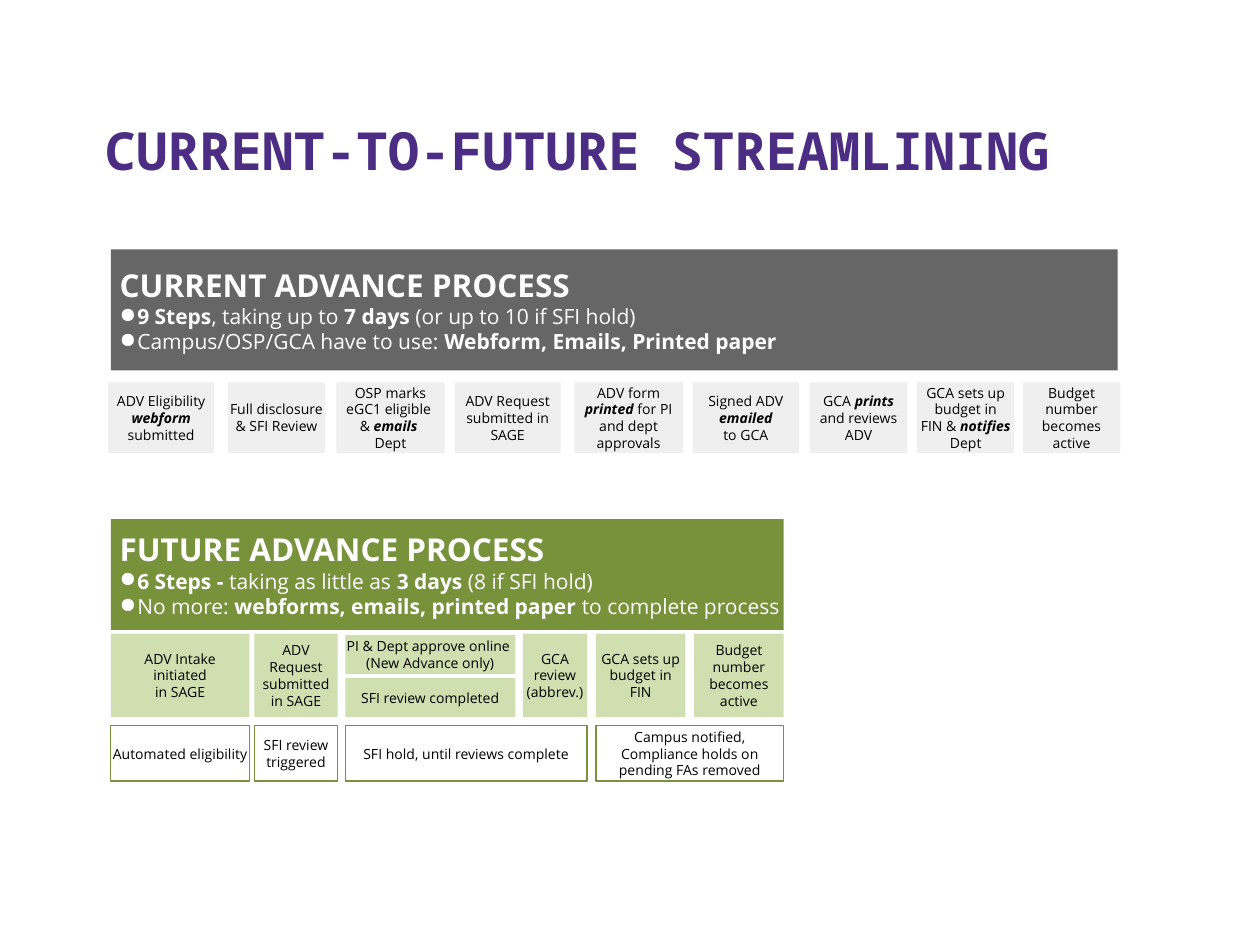
"""Build a slide comparing the current and future advance processes."""
import pptx
import pptx.util
import pptx.dml.color
import pptx.enum.shapes
import pptx.enum.text
import pptx.oxml.ns
from lxml import etree

RGBColor = pptx.dml.color.RGBColor
Inches = pptx.util.Inches
PURPLE = RGBColor(0x4B, 0x2E, 0x83)
GRAY = RGBColor(0x66, 0x66, 0x66)
PALE_GRAY = RGBColor(0xEF, 0xEF, 0xEF)
GREEN = RGBColor(0x77, 0x92, 0x3B)
PALE_GREEN = RGBColor(0xD0, 0xDF, 0xB0)
WHITE = RGBColor(0xFF, 0xFF, 0xFF)
BLACK = RGBColor(0, 0, 0)
TITLE_FONT, BODY_FONT = "Noto Sans Mono", "Open Sans"

TITLE = "CURRENT-TO-FUTURE STREAMLINING"
BANNERS = [
    ((0.88, 1.98, 7.99, 0.96), GRAY, "CURRENT ADVANCE PROCESS", [
        "*9 Steps*, taking up to *7 days *(or up to 10 if SFI hold)",
        "Campus/OSP/GCA have to use:* Webform, Emails, Printed paper*"]),
    ((0.88, 4.12, 5.34, 0.88), GREEN, "FUTURE ADVANCE PROCESS", [
        "*6 Steps - *taking as little as *3 days *(8 if SFI hold)",
        "No more: *webforms, emails, printed paper* to complete process"]),
]
CURRENT_STEPS = [
    (0.86, 0.84, "ADV Eligibility *webform *submitted"),
    (1.81, 0.77, "Full disclosure & SFI Review"),
    (2.67, 0.86, "OSP marks eGC1 eligible \v& *emails \v*Dept"),
    (3.61, 0.84, "ADV Request submitted in SAGE"),
    (4.56, 0.86, "ADV form *printed *for PI and dept approvals"),
    (5.50, 0.84, "Signed ADV *emailed*\nto GCA"),
    (6.43, 0.77, "GCA *prints* and reviews ADV"),
    (7.28, 0.77, "GCA sets up budget in\nFIN & *notifies *Dept"),
    (8.12, 0.77, "Budget number becomes active"),
]
CURRENT_ROW = (3.035, 0.56)
FUTURE_COLUMNS = [(0.88, 1.10), (2.02, 0.66), (2.74, 1.35),
                  (4.15, 0.51), (4.73, 0.71), (5.51, 0.71)]
FUTURE_ROWS = {"full": (5.03, 0.66), "upper": (5.04, 0.31),
               "lower": (5.38, 0.31), "notes": (5.76, 0.44)}
FUTURE_STEPS = [
    (0, 0, "full", "ADV Intake\ninitiated\nin SAGE"),
    (1, 1, "full", "ADV\nRequest submitted\nin SAGE"),
    (2, 2, "upper", "PI & Dept approve online \v(New Advance only)"),
    (2, 2, "lower", "SFI review completed"),
    (3, 3, "full", "GCA\nreview (abbrev.)"),
    (4, 4, "full", "GCA sets up budget in\nFIN"),
    (5, 5, "full", "Budget number becomes active"),
    (0, 0, "notes", "Automated eligibility"),
    (1, 1, "notes", "SFI review triggered"),
    (2, 3, "notes", "SFI hold, until reviews complete"),
    (4, 5, "notes", "Campus notified, Compliance holds on pending FAs removed"),
]


def apply(target, values):
    for name, value in values.items():
        setattr(target, name, value)


def set_font(font, size, color, name=BODY_FONT, **extra):
    apply(font, dict(size=pptx.util.Pt(size), name=name, **extra))
    font.color.rgb = color


def add_marked(para, text, size, color, italic=False):
    for index, part in enumerate(text.split("*")):
        strong = index % 2 == 1
        for number, piece in enumerate(part.split("\v")):
            if number:
                para.add_line_break()
            if piece:
                span = para.add_run()
                span.text = piece
                set_font(span.font, size, color, bold=strong, italic=strong and italic)


def indent(para, margin, first=0, bullet=None):
    props = para._p.get_or_add_pPr()
    props.set("marL", str(Inches(margin)))
    props.set("indent", str(Inches(first)))
    if bullet:
        qn = pptx.oxml.ns.qn
        color = etree.SubElement(props, qn("a:buClr"))
        etree.SubElement(color, qn("a:srgbClr"), val=str(WHITE))
        etree.SubElement(props, qn("a:buChar"), char=bullet)


def add_box(page, place, fill, outline=None):
    box = page.shapes.add_shape(pptx.enum.shapes.MSO_SHAPE.RECTANGLE, *map(Inches, place))
    box.shadow.inherit = False
    box.fill.solid()
    box.fill.fore_color.rgb = fill
    if outline:
        box.line.color.rgb = outline
        box.line.width = pptx.util.Pt(0.75)
    else:
        box.line.fill.background()
    apply(box.text_frame, dict(
        word_wrap=True, vertical_anchor=pptx.enum.text.MSO_ANCHOR.MIDDLE,
        margin_left=0, margin_right=0, margin_top=Inches(0.1), margin_bottom=Inches(0.1)))
    return box.text_frame


def add_banner(page, place, fill, heading, points):
    frame = add_box(page, place, fill)
    for index, text in enumerate([f"*{heading}*"] + points):
        para = frame.add_paragraph() if index else frame.paragraphs[0]
        para.alignment = pptx.enum.text.PP_ALIGN.LEFT
        if index:
            indent(para, 0.21, -0.14, "●")
        else:
            indent(para, 0.07)
        add_marked(para, text, 12 if index else 18, WHITE)


def add_step(page, place, text, fill, outline=None):
    frame = add_box(page, place, fill, outline)
    for index, line in enumerate(text.split("\n")):
        para = frame.add_paragraph() if index else frame.paragraphs[0]
        para.alignment = pptx.enum.text.PP_ALIGN.CENTER
        add_marked(para, line, 8, BLACK, italic=True)


def add_title(page):
    title = page.shapes.title
    apply(title, dict(zip(("left", "top", "width", "height"),
                          map(Inches, (0.73, 0.41, 8.95, 1.08)))))
    apply(title.text_frame, dict(
        text=TITLE, word_wrap=True, auto_size=pptx.enum.text.MSO_AUTO_SIZE.NONE,
        vertical_anchor=pptx.enum.text.MSO_ANCHOR.BOTTOM))
    para = title.text_frame.paragraphs[0]
    para.alignment = pptx.enum.text.PP_ALIGN.LEFT
    set_font(para.runs[0].font, 30, PURPLE, TITLE_FONT, bold=True)


def main():
    deck = pptx.Presentation()
    apply(deck, dict(slide_width=Inches(10), slide_height=Inches(7.5)))
    page = deck.slides.add_slide(deck.slide_layouts[5])
    add_title(page)
    for banner in BANNERS:
        add_banner(page, *banner)
    top, height = CURRENT_ROW
    for left, width, text in CURRENT_STEPS:
        add_step(page, (left, top, width, height), text, PALE_GRAY)
    for first, last, row, text in FUTURE_STEPS:
        left = FUTURE_COLUMNS[first][0]
        width = sum(FUTURE_COLUMNS[last]) - left
        top, height = FUTURE_ROWS[row]
        colors = (WHITE, GREEN) if row == "notes" else (PALE_GREEN,)
        add_step(page, (left, top, width, height), text, *colors)
    deck.save("out.pptx")


if __name__ == "__main__":
    main()
